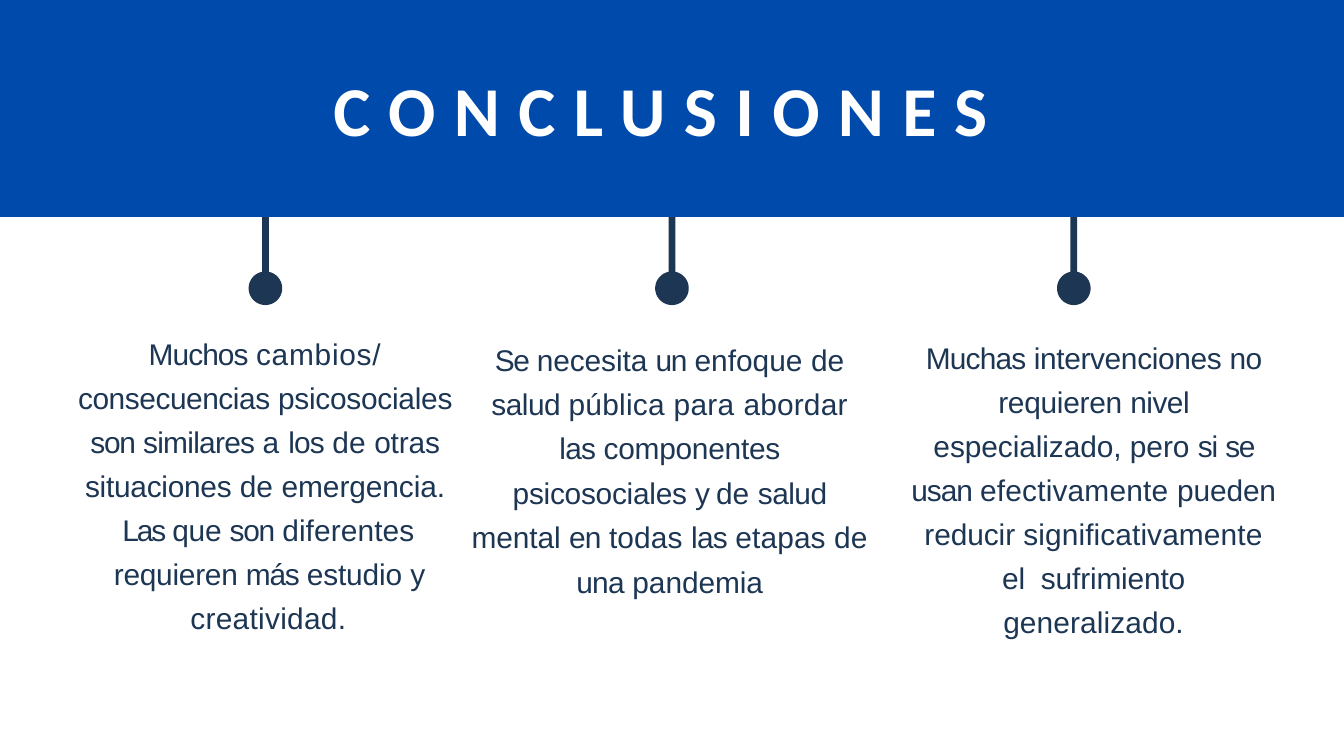
"""Build the conclusions slide: a title banner with three pinned statements."""
import math
from dataclasses import dataclass

import pptx
import pptx.dml.color
import pptx.enum.text
import pptx.util

Inches = pptx.util.Inches


@dataclass(frozen=True)
class Theme:
    """Colours, fonts and type sizes of the slide."""
    banner: str = "004AAC"
    navy: str = "1D3653"
    white: str = "FFFFFF"
    title_font: str = "Calibri"
    body_font: str = "Arial"
    title_size: int = 75
    body_size: int = 32


THEME = Theme()
TITLE_STYLE = {"name": THEME.title_font, "size": pptx.util.Pt(THEME.title_size), "bold": True}
BODY_STYLE = {"name": THEME.body_font, "size": pptx.util.Pt(THEME.body_size), "bold": False}
SLIDE_WIDTH, SLIDE_HEIGHT, BANNER_HEIGHT = 20, 11.25, 3.23
PIN_CENTERS = (3.95, 10, 15.98)

CHANGES = (
    (("Muchos ", -1), ("cambios/ ", 0.8), ("consecuencias ", -0.5), ("psicosociales ", -0.3),
     ("son ", -1.4), ("similares ", -0.8), ("a ", 0.4), ("los ", -0.9), ("de ", 0.1),
     ("otras ", -0.2), ("situaciones ", -0.3), ("de ", 0.1), ("emergencia.", -0.1)),
    (("Las ", -2.3), ("que ", -0.3), ("son ", -1.4), ("diferentes ", 0.1), ("requieren ", -0.3),
     ("más ", -1.4), ("estudio ", -0.2), ("y ", -2.4), ("creatividad.", 0.3)),
)
APPROACH = (
    (("Se ", -1.6), ("necesita ", -0.1), ("un ", -1.4), ("enfoque ", 0), ("de ", 0.1),
     ("salud ", -0.6), ("pública para ", 0.3), ("abordar ", 0.2), ("las ", -0.8),
     ("componentes psicosociales ", -0.3), ("y ", -2.4), ("de ", 0.1), ("salud ", -0.6),
     ("mental ", -0.1), ("en ", -0.8), ("todas ", 0.1), ("las ", -0.8), ("etapas de ", 0.1),
     ("una ", -0.7), ("pandemia", -0.1)),
)
INTERVENTIONS = (
    (("Muchas ", -0.9), ("intervenciones ", -0.4), ("no ", -0.8), ("requieren ", -0.3),
     ("nivel ", -0.6), ("especializado, ", -0.1), ("pero ", 0), ("si ", -1.4), ("se ", -1.6),
     ("usan ", -1.2), ("efectivamente ", 0.2), ("pueden ", -0.2), ("reducir ", -0.1),
     ("significativamente", 0.1), ("\n", 0), ("el", -0.1), (" ", 8), ("sufrimiento", -0.2),
     ("\n", 0), ("generalizado.", 0.1)),
)
STATEMENTS = (
    ((1.14, 4.86, 5.61, 4.63), CHANGES, (0, 0.1), 1.23),
    ((6.99, 4.94, 5.95, 4), APPROACH, (0,), 1.24),
    ((13.5, 4.92, 5.55, 3.97), INTERVENTIONS, (0,), 1.23),
)


def color(value):
    """Return a colour object for a hexadecimal value."""
    return pptx.dml.color.RGBColor.from_string(value)


def add_outline(slide, points, fill):
    """Draw a closed filled outline through points given in inches."""
    corners = [(Inches(x), Inches(y)) for x, y in points]
    builder = slide.shapes.build_freeform(*corners[0])
    builder.add_line_segments(corners[1:], close=True)
    shape = builder.convert_to_shape()
    shape.shadow.inherit = False
    shape.fill.solid()
    shape.fill.fore_color.rgb = color(fill)
    shape.line.fill.background()


def add_pin(slide, center_x, top=2.64, center_y=4.29, radius=0.25, half_stem=0.05, steps=36):
    """Draw a stem that ends in a round head."""
    gap = math.asin(half_stem / radius)
    angles = [gap + (2 * math.pi - 2 * gap) * step / steps for step in range(steps + 1)]
    head = [(center_x + radius * math.sin(angle), center_y - radius * math.cos(angle))
            for angle in angles]
    add_outline(slide, [(center_x - half_stem, top), (center_x + half_stem, top)] + head, THEME.navy)


def set_frame(shape, box):
    """Place a text shape and set its frame format."""
    shape.left, shape.top, shape.width, shape.height = map(Inches, box)
    settings = {"word_wrap": True, "auto_size": pptx.enum.text.MSO_AUTO_SIZE.NONE,
                "vertical_anchor": pptx.enum.text.MSO_ANCHOR.TOP, "margin_left": 0,
                "margin_right": 0, "margin_top": Inches(0.01), "margin_bottom": 0}
    for name, value in settings.items():
        setattr(shape.text_frame, name, value)


def add_run(paragraph, text, spacing, style, fill):
    """Add a run with its letter spacing in points."""
    run = paragraph.add_run()
    run.text = text
    for name, value in style.items():
        setattr(run.font, name, value)
    run.font.color.rgb = color(fill)
    run.font._element.set("spc", str(round(spacing * 100)))


def add_title(slide, text):
    """Fill the title placeholder and bring it in front of the banner."""
    title = slide.shapes.title
    set_frame(title, (4.96, 0.98, 10.09, 1.28))
    paragraph = title.text_frame.paragraphs[0]
    paragraph.alignment = pptx.enum.text.PP_ALIGN.LEFT
    add_run(paragraph, text, 19.7, TITLE_STYLE, THEME.white)
    title.element.getparent().append(title.element)


def add_statement(slide, box, paragraphs, indents, line_spacing):
    """Add a centred statement with one paragraph per group of runs."""
    shape = slide.shapes.add_textbox(0, 0, 0, 0)
    set_frame(shape, box)
    for index, (runs, indent) in enumerate(zip(paragraphs, indents)):
        frame = shape.text_frame
        paragraph = frame.add_paragraph() if index else frame.paragraphs[0]
        paragraph.alignment = pptx.enum.text.PP_ALIGN.CENTER
        paragraph.line_spacing = line_spacing
        paragraph._p.get_or_add_pPr().set("marL", str(Inches(indent)))
        for text, spacing in runs:
            if text == "\n":
                paragraph.add_line_break()
            else:
                add_run(paragraph, text, spacing, BODY_STYLE, THEME.navy)


def main():
    """Build and save the presentation."""
    presentation = pptx.Presentation()
    presentation.slide_width = Inches(SLIDE_WIDTH)
    presentation.slide_height = Inches(SLIDE_HEIGHT)
    slide = presentation.slides.add_slide(presentation.slide_layouts[5])
    for center_x in PIN_CENTERS:
        add_pin(slide, center_x)
    banner = [(0, 0), (SLIDE_WIDTH, 0), (SLIDE_WIDTH, BANNER_HEIGHT), (0, BANNER_HEIGHT)]
    add_outline(slide, banner, THEME.banner)
    add_title(slide, "CONCLUSIONES")
    for statement in STATEMENTS:
        add_statement(slide, *statement)
    presentation.save("out.pptx")


if __name__ == "__main__":
    main()
